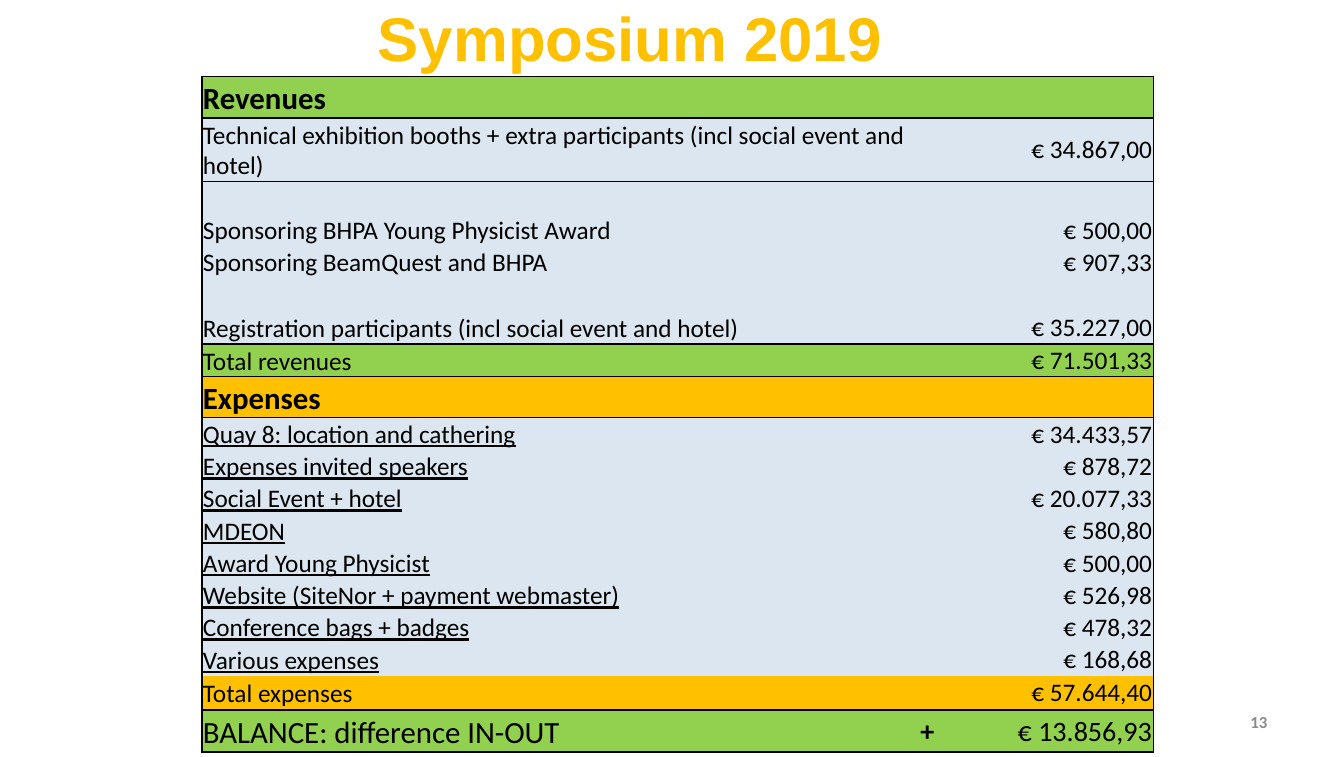
from dataclasses import dataclass
from functools import partial

from lxml.etree import SubElement
from pptx import Presentation
from pptx.dml.color import RGBColor as RGB
from pptx.enum.text import MSO_ANCHOR as ANCHOR, MSO_AUTO_SIZE as AUTO, PP_ALIGN as ALIGN
from pptx.oxml.ns import qn
from pptx.util import Inches, Pt


@dataclass(frozen=True)
class Theme:
    green: str = "92D050"
    amber: str = "FFC000"
    pale: str = "DCE6F1"
    ink: str = "000000"
    grey: str = "8C8C8C"
    title_font: str = "Arial"
    body_font: str = "Calibri"
    title: int = 44
    heading: int = 22
    result: int = 20
    body: int = 18
    number: int = 12
    no_grid: str = "{2D5ABB26-0587-4C30-8999-92F81FD0307C}"


@dataclass
class Row:
    label: str = ""
    amount: str = ""
    fill: str = Theme.pale
    height: float = 0.32
    size: int = Theme.body
    amount_size: int = Theme.body
    bold: bool = False
    underline: bool = False
    edges: str = ""
    span: int = 1
    sign: str = ""


class Deck:
    """Draws styled elements on the current slide."""

    def __init__(self, prs, theme):
        self.theme = theme
        self.s = prs.slides.add_slide(prs.slide_layouts[5])

    def text(self, tf, text, size, color, align=ALIGN.LEFT, bold=False, underline=False, font=None):
        p = tf.paragraphs[0]
        p.text = text
        p.alignment = align
        for r in p.runs:
            r.font.size = Pt(size)
            r.font.name = font or self.theme.body_font
            r.font.color.rgb = RGB.from_string(color)
            r.font.bold = bold
            r.font.underline = underline

    def title(self, text, left, top, width, height):
        sp = self.s.shapes.title
        sp.left, sp.top, sp.width, sp.height = map(Inches, (left, top, width, height))
        tf = sp.text_frame
        tf.auto_size = AUTO.NONE
        tf.vertical_anchor = ANCHOR.MIDDLE
        self.text(tf, text, self.theme.title, self.theme.amber, ALIGN.CENTER, True,
                  font=self.theme.title_font)

    def number(self, text, left, top, width, height):
        sp = self.s.shapes.add_textbox(*map(Inches, (left, top, width, height)))
        tf = sp.text_frame
        tf.word_wrap = True
        tf.vertical_anchor = ANCHOR.MIDDLE
        self.text(tf, text, self.theme.number, self.theme.grey, ALIGN.RIGHT, True)

    def cell(self, cell, fill, edges, anchor):
        cell.margin_left = cell.margin_right = cell.margin_top = Inches(0.01)
        cell.margin_bottom = 0
        cell.vertical_anchor = anchor
        tc_pr = cell._tc.get_or_add_tcPr()
        for side in "LRTB":
            if side in edges:
                ln = SubElement(tc_pr, qn(f"a:ln{side}"), w=str(Pt(1)))
                SubElement(SubElement(ln, qn("a:solidFill")), qn("a:srgbClr"), val=self.theme.ink)
        cell.fill.solid()
        cell.fill.fore_color.rgb = RGB.from_string(fill)

    def table(self, rows, left, top, widths):
        height = sum(row.height for row in rows)
        frame = self.s.shapes.add_table(len(rows), len(widths), *map(
            Inches, (left, top, sum(widths), height)))
        tbl = frame.table
        tbl.first_row = tbl.horz_banding = False
        tbl._tbl.tblPr.find(qn("a:tableStyleId")).text = self.theme.no_grid
        for col, width in zip(tbl.columns, widths):
            col.width = Inches(width)
        last = len(widths) - 1
        ink = self.theme.ink
        for i, row in enumerate(rows):
            tbl.rows[i].height = Inches(row.height)
            for j in range(len(widths)):
                sides = row.edges + {0: "L", last: "R"}.get(j, "")
                self.cell(tbl.cell(i, j), row.fill, sides, ANCHOR.MIDDLE if j else ANCHOR.BOTTOM)
            if row.span > 1:
                tbl.cell(i, 0).merge(tbl.cell(i, row.span - 1))
            self.text(tbl.cell(i, 0).text_frame, row.label, row.size, ink,
                      bold=row.bold, underline=row.underline)
            if row.sign:
                self.text(tbl.cell(i, 2).text_frame, row.sign, row.amount_size, ink, ALIGN.CENTER, True)
            self.text(tbl.cell(i, last).text_frame, row.amount, row.amount_size, ink, ALIGN.RIGHT)


def main():
    theme = Theme()
    heading = partial(Row, height=0.41, size=theme.heading, bold=True, edges="TB")
    cost = partial(Row, underline=True)
    total = partial(Row, height=0.33)

    revenues = [
        heading("Revenues", fill=theme.green),
        Row("Technical exhibition booths + extra participants (incl social event and hotel)",
            "€ 34.867,00", height=0.63, edges="T", span=3),
        Row(),
        Row("Sponsoring BHPA Young Physicist Award", "€ 500,00"),
        Row("Sponsoring BeamQuest and BHPA", "€ 907,33"),
        Row(),
        Row("Registration participants (incl social event and hotel)", "€ 35.227,00",
            height=0.33, edges="B", span=2),
        total("Total revenues", "€ 71.501,33", theme.green, edges="TB"),
    ]
    costs = [
        ("Quay 8: location and cathering", "€ 34.433,57"),
        ("Expenses invited speakers", "€ 878,72"),
        ("Social Event + hotel", "€ 20.077,33"),
        ("MDEON", "€ 580,80"),
        ("Award Young Physicist", "€ 500,00"),
        ("Website (SiteNor + payment webmaster)", "€ 526,98"),
        ("Conference bags + badges", "€ 478,32"),
        ("Various expenses", "€ 168,68"),
    ]
    expenses = [
        heading("Expenses", fill=theme.amber),
        *(cost(label, amount) for label, amount in costs),
        total("Total expenses", "€ 57.644,40", theme.amber, edges="B"),
    ]
    balance = [heading("BALANCE: difference IN-OUT", "€ 13.856,93", theme.green,
                       bold=False, amount_size=theme.result, sign="+")]

    prs = Presentation()
    prs.slide_width, prs.slide_height = Inches(13.31), Inches(7.5)
    deck = Deck(prs, theme)
    deck.title("Symposium 2019 ", 1.53, -0.26, 9.59, 1.25)
    for rows, top in ((revenues, 0.76), (expenses, 3.73), (balance, 7.04)):
        deck.table(rows, 2, top, (6, 0.79, 0.79, 1.84))
    deck.number("13", 9.54, 6.95, 3.11, 0.4)
    prs.save("out.pptx")


if __name__ == "__main__":
    main()
